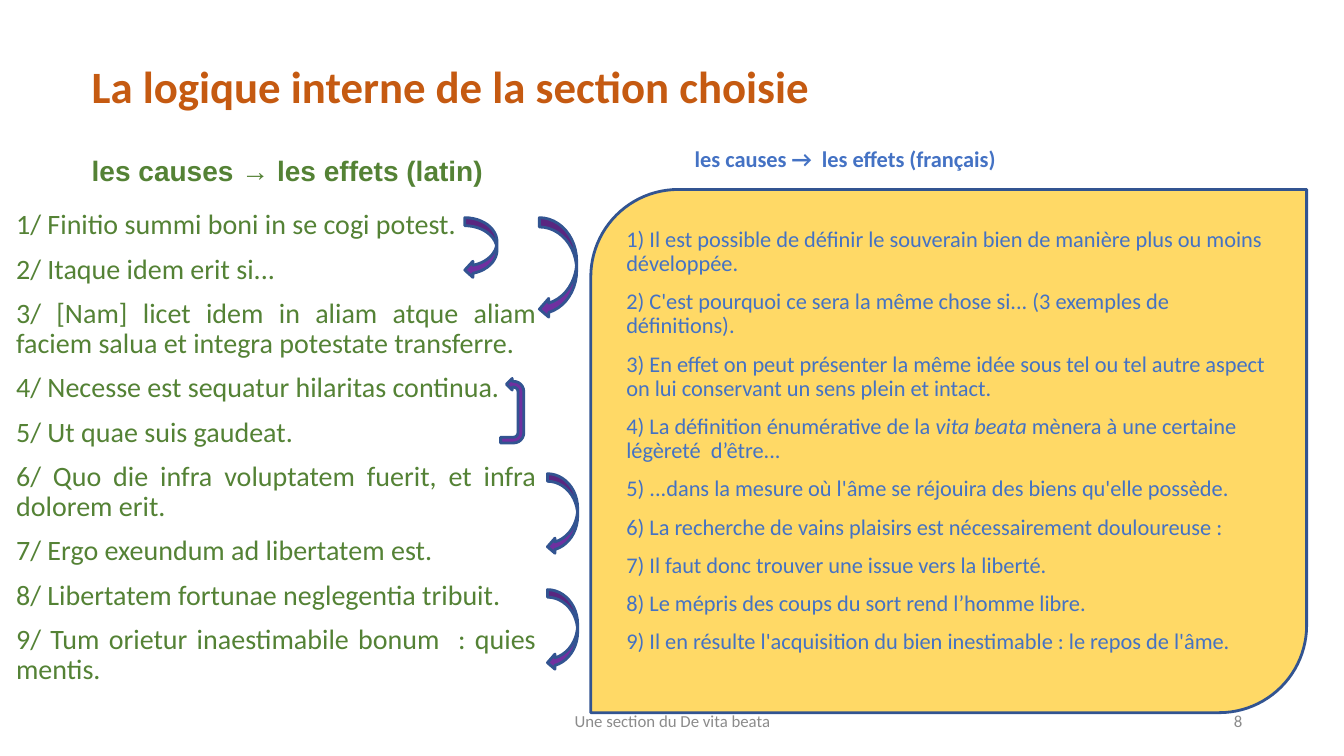
from pptx import Presentation
from pptx.dml.color import RGBColor
from pptx.enum.shapes import MSO_SHAPE as SHAPE
from pptx.enum.text import MSO_ANCHOR as ANCHOR, MSO_AUTO_SIZE as AUTO, PP_ALIGN as ALIGN
from pptx.oxml.ns import qn
from pptx.util import Inches, Pt
from lxml import etree

COLORS = {"title": "C55A11", "latin": "548235", "french": "4472C4",
          "footer": "8B8B8B", "panel": "FFD966", "arrow": "7030A0",
          "outline": "325491"}

latin = [
    "1/ Finitio summi boni in se cogi potest.",
    "2/ Itaque idem erit si...",
    "3/ [Nam] licet idem in aliam atque aliam faciem salua et integra potestate transferre.",
    "4/ Necesse est sequatur hilaritas continua.",
    "5/ Ut quae suis gaudeat.",
    "6/ Quo die infra voluptatem fuerit, et infra dolorem erit.",
    "7/ Ergo exeundum ad libertatem est.",
    "8/ Libertatem fortunae neglegentia tribuit.",
    "9/ Tum orietur inaestimabile bonum  : quies mentis.",
]
# A tuple holds several runs; every second run is italic
french = [
    "1) Il est possible de définir le souverain bien de manière plus ou moins développée.",
    "2) C'est pourquoi ce sera la même chose si... (3 exemples de définitions).",
    "3) En effet on peut présenter la même idée sous tel ou tel autre aspect on lui conservant un sens plein et intact.",
    ("4) La définition énumérative de la ", "vita beata ", "mènera à une certaine légèreté  d’être..."),
    "5) ...dans la mesure où l'âme se réjouira des biens qu'elle possède.",
    "6) La recherche de vains plaisirs est nécessairement douloureuse :",
    "7) Il faut donc trouver une issue vers la liberté.",
    "8) Le mépris des coups du sort rend l’homme libre.",
    "9) Il en résulte l'acquisition du bien inestimable : le repos de l'âme.",
]


def write(sp, box, paragraphs, size, color, font="Calibri", bold=False,
          align=ALIGN.LEFT, anchor=ANCHOR.TOP, spacing=0.9, before=10):
    sp.left, sp.top, sp.width, sp.height = [Inches(v) for v in box]
    tf = sp.text_frame
    tf.word_wrap, tf.auto_size, tf.vertical_anchor = True, AUTO.NONE, anchor
    for i, runs in enumerate(paragraphs):
        p = tf.add_paragraph() if i else tf.paragraphs[0]
        p.alignment, p.line_spacing, p.space_before = align, spacing, Pt(before)
        pPr = p._p.get_or_add_pPr()
        pPr.set("marL", "0")
        pPr.set("indent", "0")
        etree.SubElement(pPr, qn("a:buNone"))
        for j, text in enumerate((runs,) if isinstance(runs, str) else runs):
            r = p.add_run()
            r.text = text
            r.font.name, r.font.size = font, Pt(size)
            r.font.bold, r.font.italic = bold, j % 2 == 1
            r.font.color.rgb = RGBColor.from_string(COLORS[color])


def add_outlined(kind, box, fill):
    sp = slide.shapes.add_shape(kind, *[Inches(v) for v in box])
    sp.shadow.inherit = False
    sp.fill.solid()
    sp.fill.fore_color.rgb = RGBColor.from_string(COLORS[fill])
    sp.line.color.rgb = RGBColor.from_string(COLORS["outline"])
    sp.line.width = Pt(2)
    return sp


prs = Presentation()
prs.slide_width, prs.slide_height = Inches(13.33), Inches(7.5)
slide = prs.slides.add_slide(prs.slide_layouts.get_by_name("Comparison"))
title, latin_head, latin_list, french_head, spare = slide.placeholders
spare._element.getparent().remove(spare._element)

# Title, column headings and Latin list
write(title, (0.81, 0.38, 7.99, 0.79), ["La logique interne de la section choisie"],
      32, "title", bold=True, anchor=ANCHOR.BOTTOM, before=0)
write(latin_list, (0.06, 2.04, 5.36, 5.4), latin, 20, "latin", align=ALIGN.JUSTIFY)
write(latin_head, (0.81, 1.51, 4.3, 0.5), ["les causes → les effets (latin)"],
      20, "latin", font="Arial", bold=True)
write(french_head, (6.79, 1.42, 5.67, 0.45), ["les causes →  les effets (français)"],
      16, "french", bold=True)

# Footer and slide number
for box, text, align in [((4.42, 6.95, 4.5, 0.4), "Une section du De vita beata", ALIGN.CENTER),
                         ((9.42, 6.95, 3, 0.4), "8", ALIGN.RIGHT)]:
    write(slide.shapes.add_textbox(0, 0, 0, 0), box, [text], 12, "footer",
          align=align, anchor=ANCHOR.MIDDLE, spacing=1, before=0)

# French panel
panel_box = (5.86, 1.88, 7.1, 5.19)
panel = add_outlined(SHAPE.ROUND_2_DIAG_RECTANGLE, panel_box, "panel")
panel.adjustments[0], panel.adjustments[1] = 0.167, 0
write(panel, panel_box, french, 16, "french")
panel.text_frame.margin_top = Inches(0.13)

# Arrows from cause to effect
for box in [(4.61, 2.16, 0.32, 0.6), (5.35, 2.16, 0.37, 1),
            (5.43, 4.7, 0.3, 0.8), (5.43, 5.85, 0.3, 0.8)]:
    add_outlined(SHAPE.CURVED_LEFT_ARROW, box, "arrow")

# Arrow back from 5 to 4
back = add_outlined(SHAPE.U_TURN_ARROW, (4.76, 3.96, 0.64, 0.23), "arrow")
for i, value in enumerate([0.25, 0.25, 0.25, 0.44, 0.75]):
    back.adjustments[i] = value
back.rotation = 270
back._element.spPr.find(qn("a:xfrm")).set("flipV", "1")

prs.save("out.pptx")
